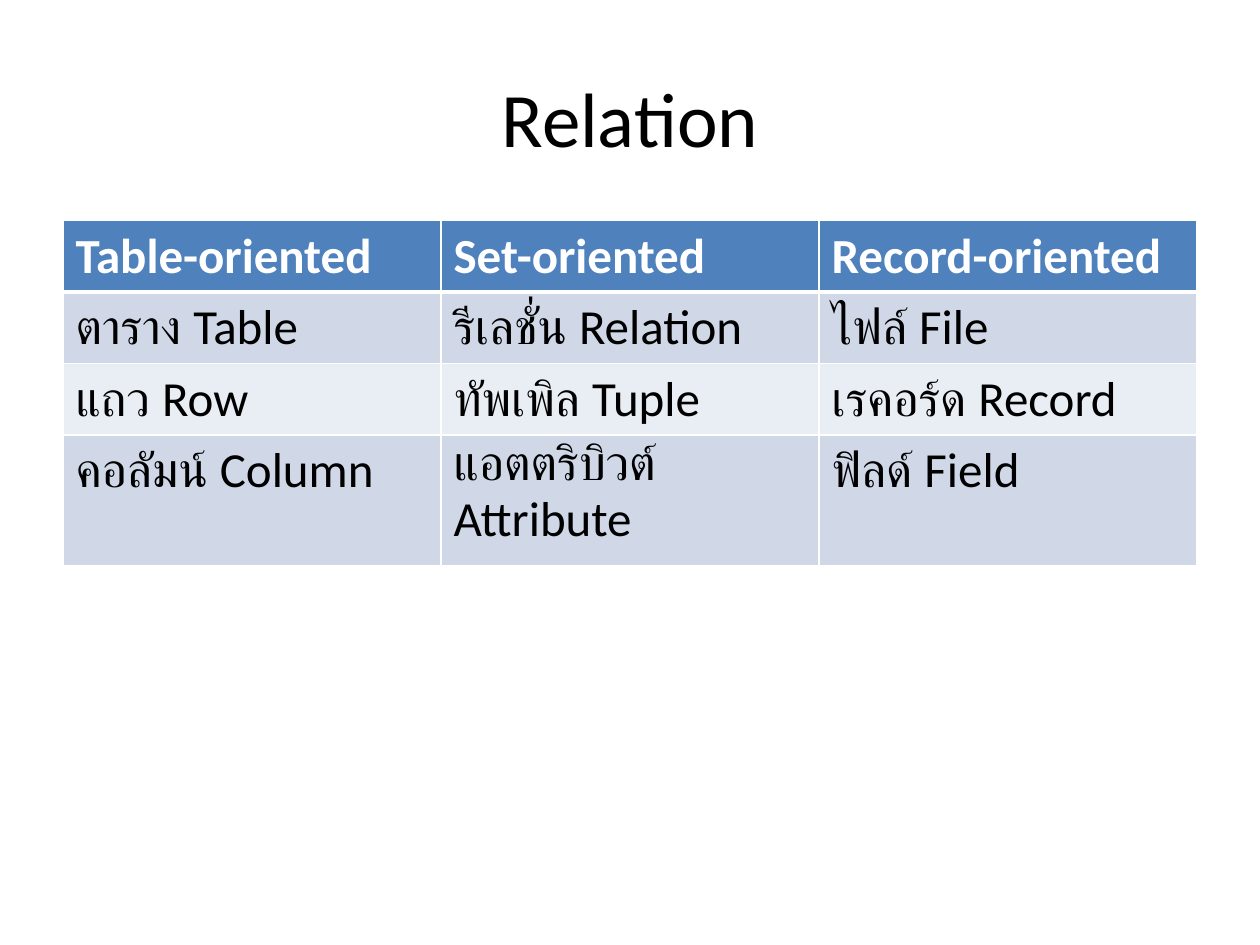
"""Build a slide comparing three vocabularies for a relation."""
from dataclasses import dataclass

from lxml import etree
from pptx import Presentation
from pptx.dml.color import RGBColor
from pptx.enum.text import MSO_ANCHOR, PP_ALIGN
from pptx.oxml.ns import qn
from pptx.util import Pt

CENTER = PP_ALIGN.CENTER
MIDDLE = MSO_ANCHOR.MIDDLE
BLACK = RGBColor(0x00, 0x00, 0x00)
WHITE = RGBColor(0xFF, 0xFF, 0xFF)
BLUE = RGBColor(0x4F, 0x81, 0xBD)
BAND_DARK = RGBColor(0xD0, 0xD8, 0xE8)
BAND_LIGHT = RGBColor(0xE9, 0xED, 0xF4)
FONT = "Calibri"
LEFT, WIDTH = 36, 648
ROW_HEIGHT = 29.2


@dataclass(frozen=True)
class TableRow:
    texts: tuple[str, ...]
    fill: RGBColor
    color: RGBColor = BLACK
    bold: bool = False
    bottom: float = 1


ROWS = (
    TableRow(("Table-oriented", "Set-oriented", "Record-oriented"), BLUE, WHITE, True, 3),
    TableRow(("ตาราง Table", "รีเลชั่น Relation", "ไฟล์ File"), BAND_DARK),
    TableRow(("แถว Row", "ทัพเพิล Tuple", "เรคอร์ด Record"), BAND_LIGHT),
    TableRow(("คอลัมน์ Column", "แอตตริบิวต์ Attribute", "ฟิลด์ Field"), BAND_DARK),
)


def style_text(tf, size: float, color: RGBColor, bold: bool = False) -> None:
    for p in tf.paragraphs:
        for r in p.runs:
            r.font.name = FONT
            r.font.size = Pt(size)
            r.font.bold = bold
            r.font.color.rgb = color


def add_title(s, text: str) -> None:
    sp = s.shapes.add_textbox(Pt(LEFT), Pt(21.6), Pt(WIDTH), Pt(90))
    tf = sp.text_frame
    tf.word_wrap = True
    tf.vertical_anchor = MIDDLE
    tf.text = text
    tf.paragraphs[0].alignment = CENTER
    style_text(tf, 44, BLACK)


def set_borders(cell, top: float, bottom: float) -> None:
    tc_pr = cell._tc.get_or_add_tcPr()
    for side, width in (("L", 1), ("R", 1), ("T", top), ("B", bottom)):
        ln = etree.SubElement(tc_pr, qn(f"a:ln{side}"), w=str(Pt(width)))
        fill = etree.SubElement(ln, qn("a:solidFill"))
        etree.SubElement(fill, qn("a:srgbClr"), val=str(WHITE))


def add_term_table(s, rows: tuple[TableRow, ...]) -> None:
    table = s.shapes.add_table(
        len(rows), len(rows[0].texts), Pt(LEFT), Pt(126), Pt(WIDTH), Pt(ROW_HEIGHT * len(rows))
    ).table
    top = 1
    for i, row in enumerate(rows):
        for j, text in enumerate(row.texts):
            cell = table.cell(i, j)
            cell.text_frame.text = text
            style_text(cell.text_frame, 28, row.color, row.bold)
            set_borders(cell, top, row.bottom)
            cell.fill.solid()
            cell.fill.fore_color.rgb = row.fill
        top = row.bottom


def main() -> None:
    prs = Presentation()
    prs.slide_width, prs.slide_height = Pt(720), Pt(540)
    s = prs.slides.add_slide(prs.slide_layouts[6])
    add_title(s, "Relation")
    add_term_table(s, ROWS)
    prs.save("out.pptx")


if __name__ == "__main__":
    main()
